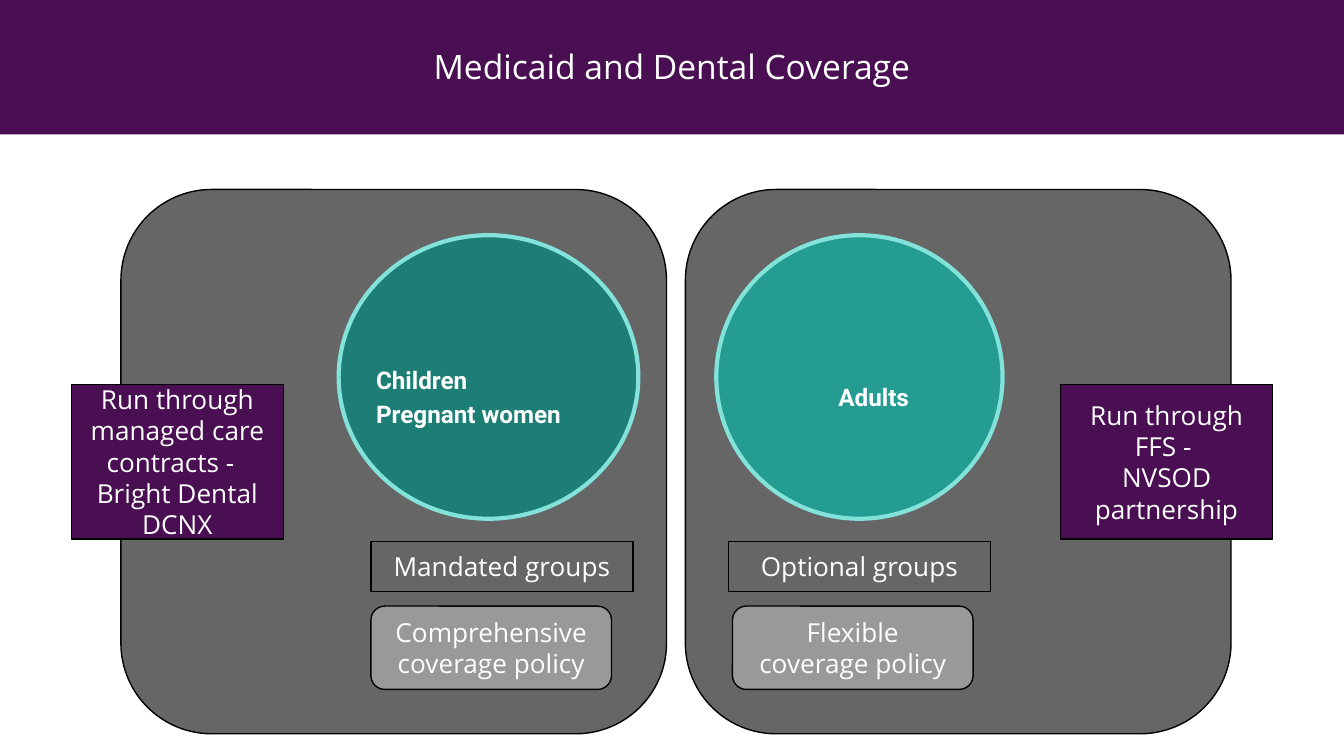
import pptx
import pptx.util
import pptx.dml.color
import pptx.enum.shapes
import pptx.enum.text

Inches = pptx.util.Inches
Pt = pptx.util.Pt
SHAPES = pptx.enum.shapes.MSO_SHAPE
ALIGN = pptx.enum.text.PP_ALIGN

COLOURS = {
    "purple": "490F52", "panel": "666666", "policy": "999999",
    "children": "1D7E75", "adults": "249C91", "ring": "83E3DA",
    "black": "000000", "white": "FFFFFF",
}

# Content: one dict per coverage group, positions as left, top, width, height
TITLE = "Medicaid and Dental Coverage"
GROUPS = [
    {
        "panel_left": 0.9, "colour": "children",
        "circle": (2.52, 1.75, 2.23, 2.11),
        "people": ["Children ", "Pregnant women"], "people_at": (2.7, 2.64, 1.89, 0.59),
        "status": "Mandated groups", "status_left": 2.76,
        "policy": "Comprehensive coverage policy", "policy_left": 2.76,
        "delivery": ["Run through managed care contracts -  ", "Bright Dental", "DCNX"],
        "delivery_left": 0.53,
    },
    {
        "panel_left": 5.1, "colour": "adults",
        "circle": (5.33, 1.75, 2.13, 2.11),
        "people": ["Adults"], "people_at": (6.14, 2.64, 1.24, 0.59),
        "status": "Optional groups", "status_left": 5.42,
        "policy": "Flexible coverage policy", "policy_left": 5.45,
        "delivery": ["Run through FFS - ", "NVSOD partnership"],
        "delivery_left": 7.89,
    },
]

# Text formats
LABEL = {"font": {"name": "Open Sans", "size": Pt(14)},
         "para": {"alignment": ALIGN.CENTER}}
HEADING = {"font": {"name": "Open Sans", "size": Pt(18), "bold": False},
           "para": {"alignment": ALIGN.CENTER, "line_spacing": 1.0}}
PEOPLE = {"font": {"name": "Roboto", "size": Pt(13), "bold": True},
          "para": {"alignment": ALIGN.LEFT, "line_spacing": 1.15}}
FRAME = {
    "word_wrap": True, "auto_size": pptx.enum.text.MSO_AUTO_SIZE.NONE,
    "vertical_anchor": pptx.enum.text.MSO_ANCHOR.MIDDLE,
    "margin_left": Inches(0.1), "margin_right": Inches(0.1),
    "margin_top": Inches(0.1), "margin_bottom": Inches(0.1),
}


def rgb(name):
    return pptx.dml.color.RGBColor.from_string(COLOURS[name])


def set_values(target, values):
    for name, value in values.items():
        setattr(target, name, value)


def write(box, lines, style):
    frame = box.text_frame
    set_values(frame, FRAME)
    for index, line in enumerate(lines):
        para = frame.add_paragraph() if index else frame.paragraphs[0]
        set_values(para, style["para"])
        span = para.add_run()
        span.text = line
        set_values(span.font, style["font"])
        span.font.color.rgb = rgb("white")


def add_box(page, kind, place, fill, line="black", width=0.75, lines=()):
    box = page.shapes.add_shape(kind, *map(Inches, place))
    box.shadow.inherit = False
    box.fill.solid()
    box.fill.fore_color.rgb = rgb(fill)
    if line:
        box.line.color.rgb = rgb(line)
        box.line.width = Pt(width)
    else:
        box.line.fill.background()
    if lines:
        write(box, lines, LABEL)
    return box


# Widescreen page, 16 by 9
deck = pptx.Presentation()
deck.slide_width = Inches(10)
deck.slide_height = Inches(10 * 9 / 16)
page = deck.slides.add_slide(deck.slide_layouts[5])

# Header band with the title in front of it
add_box(page, SHAPES.RECTANGLE, (-0.01, 0, 10.03, 1), "purple", line=None)
title = page.shapes.title
page.shapes._spTree.append(title._element)
title.left, title.top, title.width, title.height = map(Inches, (1.72, 0.17, 6.56, 0.65))
write(title, [TITLE], HEADING)

# One panel per group, with its circle, labels and delivery note
for group in GROUPS:
    add_box(page, SHAPES.ROUNDED_RECTANGLE, (group["panel_left"], 1.41, 4.06, 4.05), "panel")
    add_box(page, SHAPES.OVAL, group["circle"], group["colour"], "ring", 2.25)
    people = page.shapes.add_textbox(*map(Inches, group["people_at"]))
    write(people, group["people"], PEOPLE)
    add_box(page, SHAPES.RECTANGLE, (group["status_left"], 4.03, 1.95, 0.37),
            "panel", lines=[group["status"]])
    add_box(page, SHAPES.ROUNDED_RECTANGLE, (group["policy_left"], 4.51, 1.79, 0.62),
            "policy", lines=[group["policy"]])
    add_box(page, SHAPES.RECTANGLE, (group["delivery_left"], 2.86, 1.58, 1.15),
            "purple", lines=group["delivery"])

deck.save("out.pptx")
